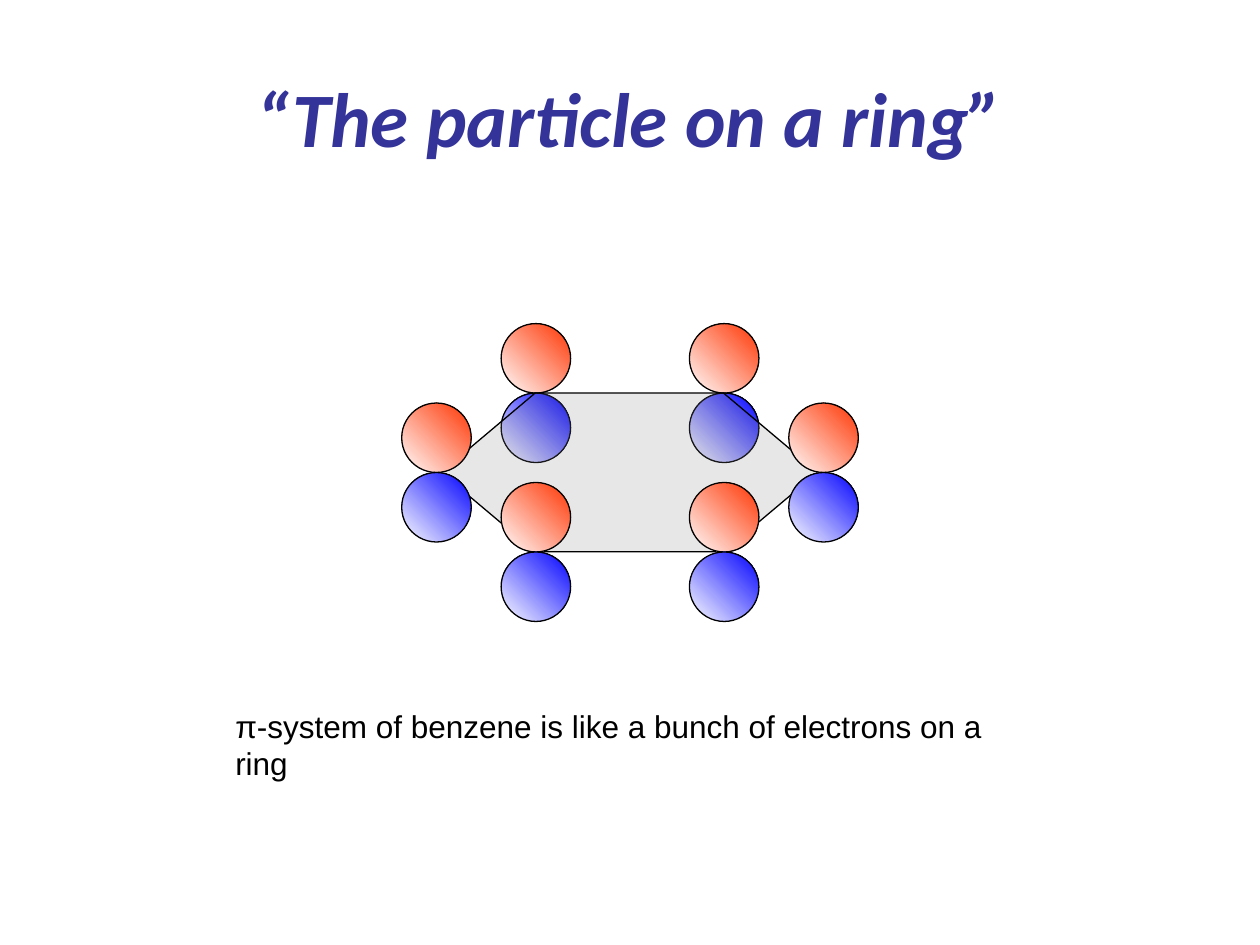
from pptx import Presentation
from pptx.dml.color import RGBColor
from pptx.enum import shapes, text
from pptx.oxml.ns import qn
from pptx.util import Pt
from lxml import etree

TITLE = "“The particle on a ring”"
CAPTION = "π-system of benzene is like a bunch of electrons on a ring"

THEME = {
    "title": ("Calibri", 44, "333399"),
    "caption": ("Arial", 18, "000000"),
    "line": "000000",
    "lobe_base": "FFFFFF",
    "upper_lobe": "FF3300",
    "lower_lobe": "0000FF",
    "ring": "808080",
    "ring_alpha": 19,
}

TITLE_BOX = (36, 21.6, 648, 90)
CAPTION_BOX = (127.4, 400.3, 473, 28.8)
RING_BOX = (252, 224.6, 215.3, 90.7)
LOBE = 39.7
CENTER_X, CENTER_Y = 360, 270
INNER_DX, OUTER_DX, DY = 53.8, 110.6, 45.4
BACK_ATOMS = [(-INNER_DX, -DY), (INNER_DX, -DY)]
FRONT_ATOMS = [(-OUTER_DX, 0), (-INNER_DX, DY), (INNER_DX, DY), (OUTER_DX, 0)]


def points(box):
    return [Pt(v) for v in box]


def color(name):
    return RGBColor.from_string(THEME[name])


def write(sp, words, style):
    tf = sp.text_frame
    tf.word_wrap = True
    p = tf.paragraphs[0]
    p.text = words
    name, size, rgb = THEME[style]
    p.font.name, p.font.size = name, Pt(size)
    p.font.color.rgb = RGBColor.from_string(rgb)
    return tf, p


def add_outlined(parent, kind, box):
    sp = parent.add_shape(kind, *points(box))
    sp.shadow.inherit = False
    sp.line.color.rgb = color("line")
    sp.line.width = Pt(0.75)
    return sp


def add_orbital(s, dx, dy):
    group = s.shapes.add_group_shape()
    x, y = CENTER_X + dx - LOBE / 2, CENTER_Y + dy
    for name, top in (("upper_lobe", y - LOBE), ("lower_lobe", y)):
        sp = add_outlined(group.shapes, shapes.MSO_SHAPE.OVAL, (x, top, LOBE, LOBE))
        sp.fill.gradient()
        sp.fill.gradient_angle = 45
        for stop, tone in zip(sp.fill.gradient_stops, ("lobe_base", name)):
            stop.color.rgb = color(tone)


def add_ring(s):
    sp = add_outlined(s.shapes, shapes.MSO_SHAPE.HEXAGON, RING_BOX)
    sp.adjustments[0] = 0.594
    sp.fill.solid()
    sp.fill.fore_color.rgb = color("ring")
    rgb = sp._element.spPr.find(qn("a:solidFill")).find(qn("a:srgbClr"))
    etree.SubElement(rgb, qn("a:alpha")).set("val", str(THEME["ring_alpha"] * 1000))


def main():
    prs = Presentation()
    prs.slide_width, prs.slide_height = Pt(720), Pt(540)
    s = prs.slides.add_slide(prs.slide_layouts[5])

    title = s.shapes.title
    title.left, title.top, title.width, title.height = points(TITLE_BOX)
    tf, p = write(title, TITLE, "title")
    tf.vertical_anchor = text.MSO_ANCHOR.MIDDLE
    p.alignment = text.PP_ALIGN.CENTER
    p.font.bold = p.font.italic = True

    write(s.shapes.add_textbox(*points(CAPTION_BOX)), CAPTION, "caption")

    for atom in BACK_ATOMS:
        add_orbital(s, *atom)
    add_ring(s)
    for atom in FRONT_ATOMS:
        add_orbital(s, *atom)

    prs.save("out.pptx")


if __name__ == "__main__":
    main()
